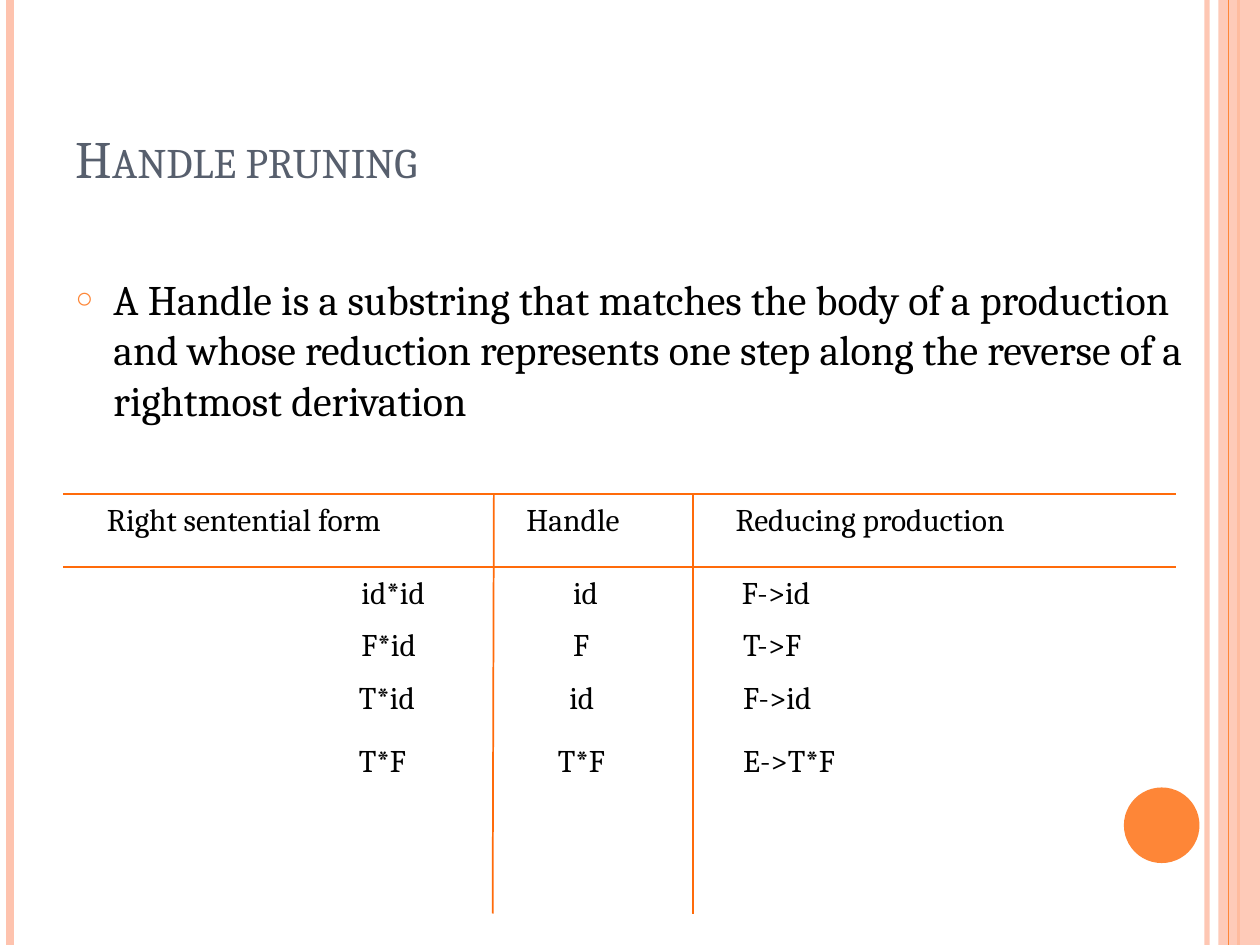
"""Build the handle pruning slide with its reduction table."""
from lxml import etree
from pptx import Presentation
from pptx.dml.color import RGBColor
from pptx.enum.shapes import MSO_CONNECTOR, MSO_SHAPE
from pptx.enum.text import MSO_ANCHOR, MSO_AUTO_SIZE, PP_ALIGN
from pptx.oxml.ns import qn
from pptx.util import Inches, Pt

STRAIGHT = MSO_CONNECTOR.STRAIGHT
RECTANGLE, OVAL = MSO_SHAPE.RECTANGLE, MSO_SHAPE.OVAL
TOP, BOTTOM = MSO_ANCHOR.TOP, MSO_ANCHOR.BOTTOM
LEFT, NO_FIT = PP_ALIGN.LEFT, MSO_AUTO_SIZE.NONE

FONT = "Cambria"
ORANGE, RULE_ORANGE, PEACH = "FE8637", "FF6B0A", "FEC3AE"
SLATE, BLACK = "575F6D", "000000"
WIDTH, HEIGHT = 10, 7.5

TITLE = "Handle pruning"
BODY = ("A Handle is a substring that matches the body of a production and whose "
        "reduction represents one step along the reverse of a rightmost derivation")
HEADER_TOP, CELL_HEIGHT = 3.92, 0.51
HEADERS = [("Right sentential form", 0.75, 3.06), ("Handle", 4.08, 1.17),
           ("Reducing production", 5.74, 3.03)]
CELL_WIDTHS = [0.9, 0.76, 1.27]
ROWS = [
    (4.5, (2.77, 4.45, 5.79), ("id*id", "id", "F->id")),
    (4.91, (2.77, 4.45, 5.8), ("F*id", "F", "T->F")),
    (5.33, (2.75, 4.42, 5.8), ("T*id", "id", "F->id")),
    (5.83, (2.75, 4.33, 5.8), ("T*F", "T*F", "E->T*F")),
]
RULE_LEFT, RULE_RIGHT, RULE_BOTTOM = 0.5, 9.33, 7.25
ROW_RULES = [HEADER_TOP, 4.5]
COLUMN_RULES = [(3.92, 3.91), (5.5, 5.5)]


def rgb(value):
    return RGBColor.from_string(value)


def set_alpha(fill_parent, percent):
    color = next(fill_parent.iter(qn("a:srgbClr")))
    etree.SubElement(color, qn("a:alpha"), val=str(percent * 1000))


def add_line(page, start, end, color, width, alpha=100):
    line = page.shapes.add_connector(STRAIGHT, *map(Inches, start + end))
    line.line.color.rgb = rgb(color)
    line.line.width = Pt(width)
    properties = line._element.spPr
    if alpha < 100:
        set_alpha(properties, alpha)
    etree.SubElement(properties, qn("a:effectLst"))


def add_solid(page, kind, area, color, alpha=100):
    shape = page.shapes.add_shape(kind, *map(Inches, area))
    shape.shadow.inherit = False
    shape.fill.solid()
    shape.fill.fore_color.rgb = rgb(color)
    shape.line.fill.background()
    if alpha < 100:
        set_alpha(shape._element.spPr, alpha)


def write(box, text, size=18, color=BLACK, anchor=TOP, small_caps=False):
    frame = box.text_frame
    frame.word_wrap = True
    frame.auto_size = NO_FIT
    frame.vertical_anchor = anchor
    para = frame.paragraphs[0]
    para.alignment = LEFT
    span = para.add_run()
    span.text = text
    span.font.name = FONT
    span.font.size = Pt(size)
    span.font.color.rgb = rgb(color)
    if small_caps:
        span.font._element.set("cap", "small")
    return para


def place(box, left, top, width, height):
    box.left, box.top = Inches(left), Inches(top)
    box.width, box.height = Inches(width), Inches(height)


def add_bullet(para, symbol, color, percent, indent):
    properties = para._p.get_or_add_pPr()
    properties.set("marL", str(Inches(indent)))
    properties.set("indent", str(-Inches(indent)))
    bullet_color = etree.SubElement(properties, qn("a:buClr"))
    etree.SubElement(bullet_color, qn("a:srgbClr"), val=color)
    etree.SubElement(properties, qn("a:buSzPct"), val=str(percent * 1000))
    etree.SubElement(properties, qn("a:buChar"), char=symbol)


def add_cell(page, text, left, top, width):
    box = page.shapes.add_textbox(*map(Inches, (left, top, width, CELL_HEIGHT)))
    write(box, text)


def add_decoration(page):
    def stripe(x, color, width, alpha=100):
        add_line(page, (x, 0), (x, HEIGHT), color, width, alpha)

    stripe(9.58, PEACH, 3, 93)
    stripe(0.08, PEACH, 4.5)
    stripe(9.83, ORANGE, 1.5)
    add_solid(page, RECTANGLE, (9.67, 0, 0.33, HEIGHT), PEACH, 87)
    stripe(9.75, ORANGE, 0.75)
    add_solid(page, OVAL, (8.92, 6.25, 0.6, 0.6), ORANGE)


def add_reductions(page):
    for text, left, width in HEADERS:
        add_cell(page, text, left, HEADER_TOP, width)
    for y in ROW_RULES:
        add_line(page, (RULE_LEFT, y), (RULE_RIGHT, y), RULE_ORANGE, 1)
    for top_x, bottom_x in COLUMN_RULES:
        add_line(page, (top_x, HEADER_TOP), (bottom_x, RULE_BOTTOM), RULE_ORANGE, 1)
    for top, lefts, texts in ROWS:
        for text, left, width in zip(texts, lefts, CELL_WIDTHS):
            add_cell(page, text, left, top, width)


def main():
    deck = Presentation()
    deck.slide_width, deck.slide_height = Inches(WIDTH), Inches(HEIGHT)
    page = deck.slides.add_slide(deck.slide_layouts[1])
    add_decoration(page)
    title, body = page.placeholders
    place(title, 0.5, 0.3, 8.17, 1.25)
    write(title, TITLE, size=30, color=SLATE, anchor=BOTTOM, small_caps=True)
    place(body, 0.5, 2.12, 9, 1.72)
    para = write(body, BODY, size=24)
    para.space_before = Pt(6)
    add_bullet(para, "○", ORANGE, 70, 0.3)
    add_reductions(page)
    deck.save("out.pptx")


if __name__ == "__main__":
    main()
